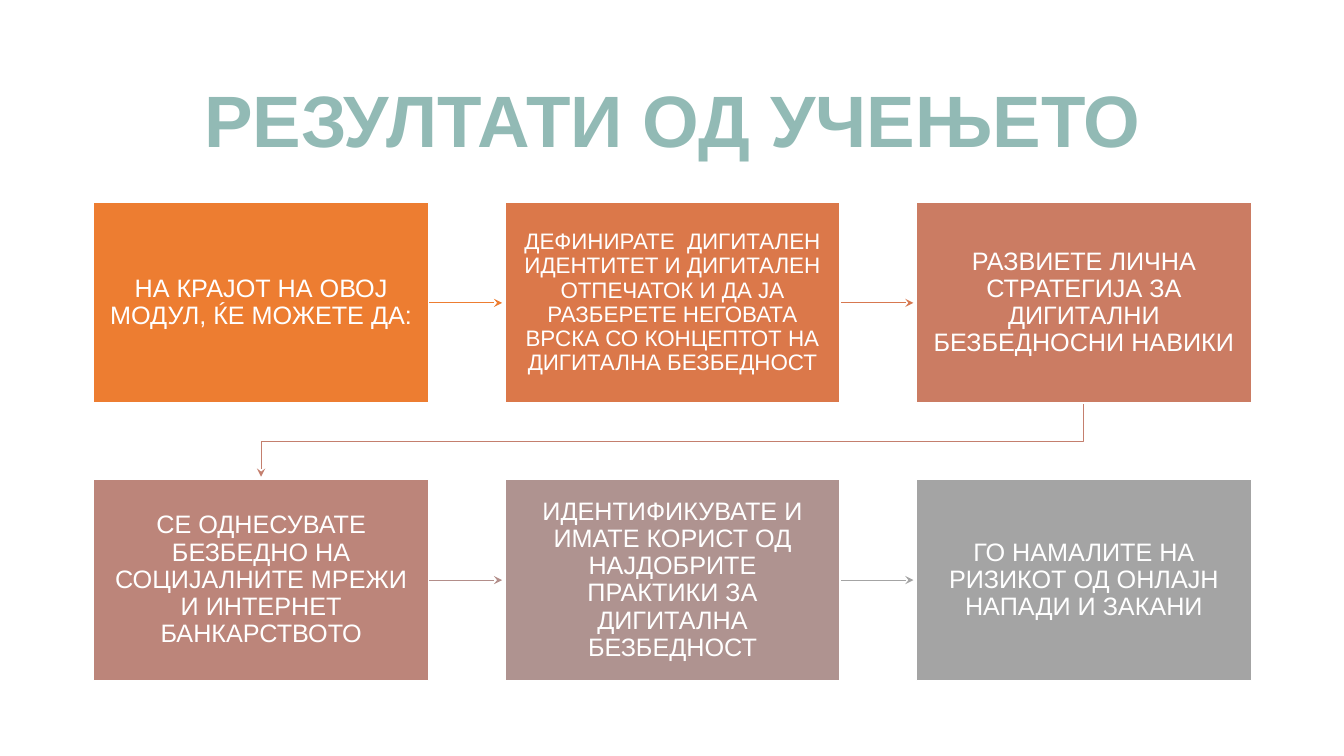
from dataclasses import dataclass

from lxml import etree
from pptx import Presentation
from pptx import util as u
from pptx.dml.color import RGBColor
from pptx.enum import shapes, text
from pptx.oxml import ns


@dataclass(frozen=True)
class Theme:
    font: str = "Arial"
    title: str = "92BAB5"
    light: str = "FFFFFF"
    title_size: int = 52
    step_size: int = 18
    long_step_size: int = 16
    border: float = 1
    arrow: float = 0.75


theme = Theme()


def write(frame, wording, size, color, bold=False, margins=(0.1, 0.05)):
    """Fill a text frame with one centred paragraph."""
    frame.word_wrap = True
    frame.vertical_anchor = text.MSO_ANCHOR.MIDDLE
    frame.margin_left = frame.margin_right = u.Inches(margins[0])
    frame.margin_top = frame.margin_bottom = u.Inches(margins[1])
    paragraph = frame.paragraphs[0]
    paragraph.alignment = text.PP_ALIGN.CENTER
    paragraph.line_spacing = 0.9
    run = paragraph.add_run()
    run.text = wording
    run.font.name = theme.font
    run.font.size = u.Pt(size)
    run.font.bold = bold
    run.font.color.rgb = RGBColor.from_string(color)


def style_arrow(arrow, color):
    """Give a line its colour, width and stealth head, without shadow."""
    arrow.line.color.rgb = RGBColor.from_string(color)
    arrow.line.width = u.Pt(theme.arrow)
    etree.SubElement(arrow.line._get_or_add_ln(), ns.qn("a:tailEnd"), type="stealth")
    etree.SubElement(arrow._element.spPr, ns.qn("a:effectLst"))


deck = Presentation()
deck.slide_width, deck.slide_height = u.Inches(13.33), u.Inches(7.5)
slide = deck.slides.add_slide(deck.slide_layouts[6])

# Title
title = slide.shapes.add_textbox(u.Inches(0.92), u.Inches(0.61), u.Inches(11.5), u.Inches(1.24))
write(title.text_frame, "РЕЗУЛТАТИ ОД УЧЕЊЕТО", theme.title_size, theme.title, bold=True)

# Steps: wording, text size, fill, colour of the arrow to the next step
steps = [
    ("НА КРАЈОТ НА ОВОЈ МОДУЛ, ЌЕ МОЖЕТЕ ДА:", theme.step_size, "ED7D31", "ED7D31"),
    ("ДЕФИНИРАТЕ  ДИГИТАЛЕН ИДЕНТИТЕТ И ДИГИТАЛЕН ОТПЕЧАТОК И ДА ЈА РАЗБЕРЕТЕ "
     "НЕГОВАТА ВРСКА СО КОНЦЕПТОТ НА ДИГИТАЛНА БЕЗБЕДНОСТ",
     theme.long_step_size, "DB784A", "D77850"),
    ("РАЗВИЕТЕ ЛИЧНА СТРАТЕГИЈА ЗА ДИГИТАЛНИ БЕЗБЕДНОСНИ НАВИКИ",
     theme.step_size, "CB7C63", "C47F6E"),
    ("СЕ ОДНЕСУВАТЕ БЕЗБЕДНО НА СОЦИЈАЛНИТЕ МРЕЖИ И ИНТЕРНЕТ БАНКАРСТВОТО",
     theme.step_size, "BC857A", "B38E8A"),
    ("ИДЕНТИФИКУВАТЕ И ИМАТЕ КОРИСТ ОД НАЈДОБРИТЕ ПРАКТИКИ ЗА ДИГИТАЛНА БЕЗБЕДНОСТ",
     theme.step_size, "AF9390", "A4A4A4"),
    ("ГО НАМАЛИТЕ НА РИЗИКОТ ОД ОНЛАЈН НАПАДИ И ЗАКАНИ", theme.step_size, "A4A4A4", None),
]
columns = 3
first_left, first_top = 0.93, 2.01
step_width, step_height = 3.32, 1.99
column_pitch, row_pitch = 4.08, 2.75
arrow_length = 0.73

for index, (wording, size, fill, arrow_color) in enumerate(steps):
    row, column = divmod(index, columns)
    left = first_left + column * column_pitch
    top = first_top + row * row_pitch
    right, bottom = left + step_width, top + step_height

    # Arrow to the next step in the row
    if column < columns - 1:
        middle = u.Inches(top + step_height / 2)
        arrow = slide.shapes.add_connector(
            shapes.MSO_CONNECTOR.STRAIGHT,
            u.Inches(right), middle, u.Inches(right + arrow_length), middle)
        style_arrow(arrow, arrow_color)
    # Bent arrow to the start of the next row
    elif arrow_color:
        start_x = u.Inches(left + step_width / 2)
        end_x = u.Inches(first_left + step_width / 2)
        bend_y = u.Inches((bottom + top + row_pitch) / 2)
        outline = slide.shapes.build_freeform(start_x, u.Inches(bottom))
        outline.add_line_segments(
            [(start_x, bend_y), (end_x, bend_y), (end_x, u.Inches(bottom + arrow_length))],
            close=False)
        row_arrow = outline.convert_to_shape()
        row_arrow.fill.background()
        style_arrow(row_arrow, arrow_color)

    # Step box
    step = slide.shapes.add_shape(
        shapes.MSO_SHAPE.RECTANGLE,
        u.Inches(left), u.Inches(top), u.Inches(step_width), u.Inches(step_height))
    step.shadow.inherit = False
    step.fill.solid()
    step.fill.fore_color.rgb = RGBColor.from_string(fill)
    step.line.color.rgb = RGBColor.from_string(theme.light)
    step.line.width = u.Pt(theme.border)
    write(step.text_frame, wording, size, theme.light, margins=(0.16, 0.17))

deck.save("out.pptx")
